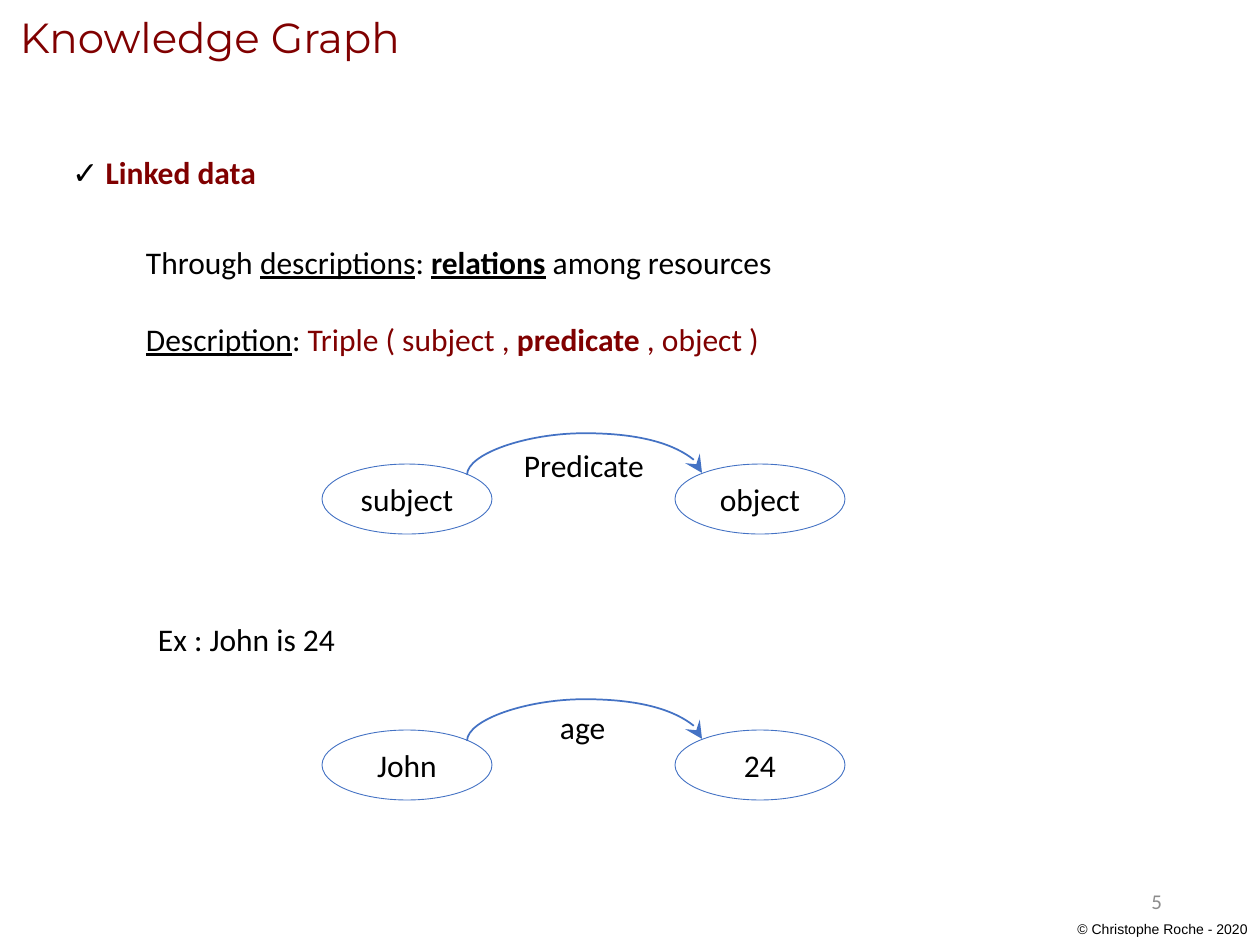
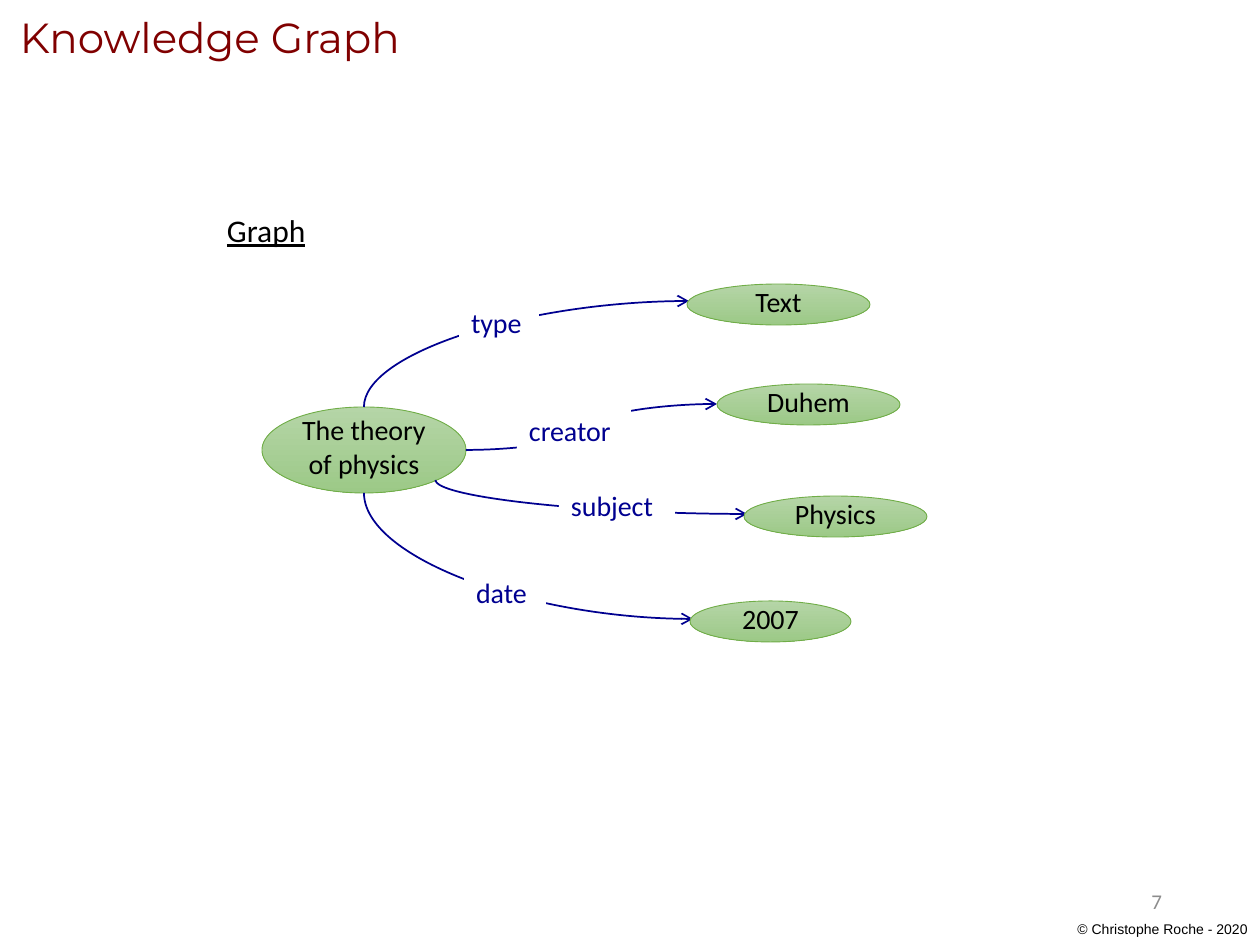
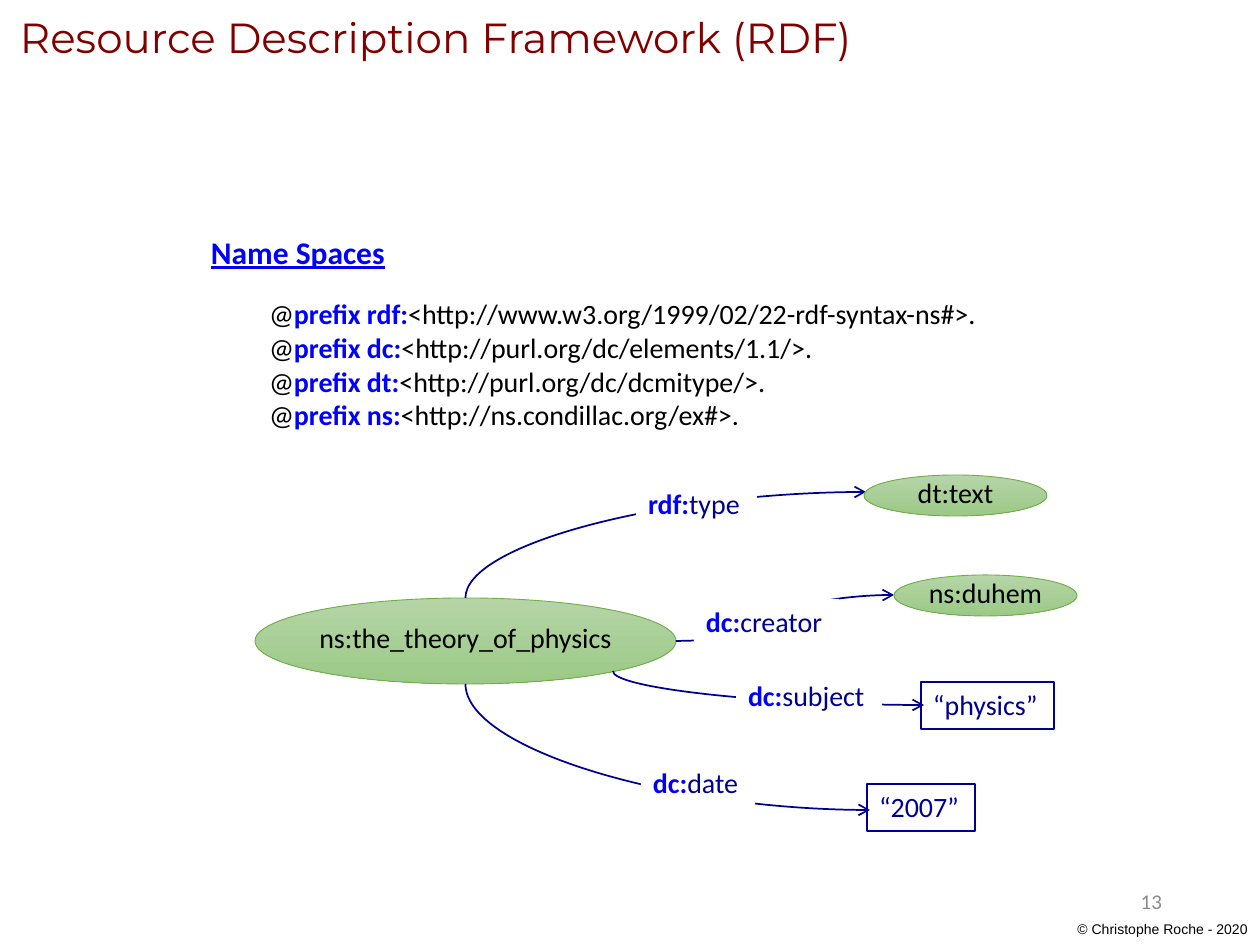
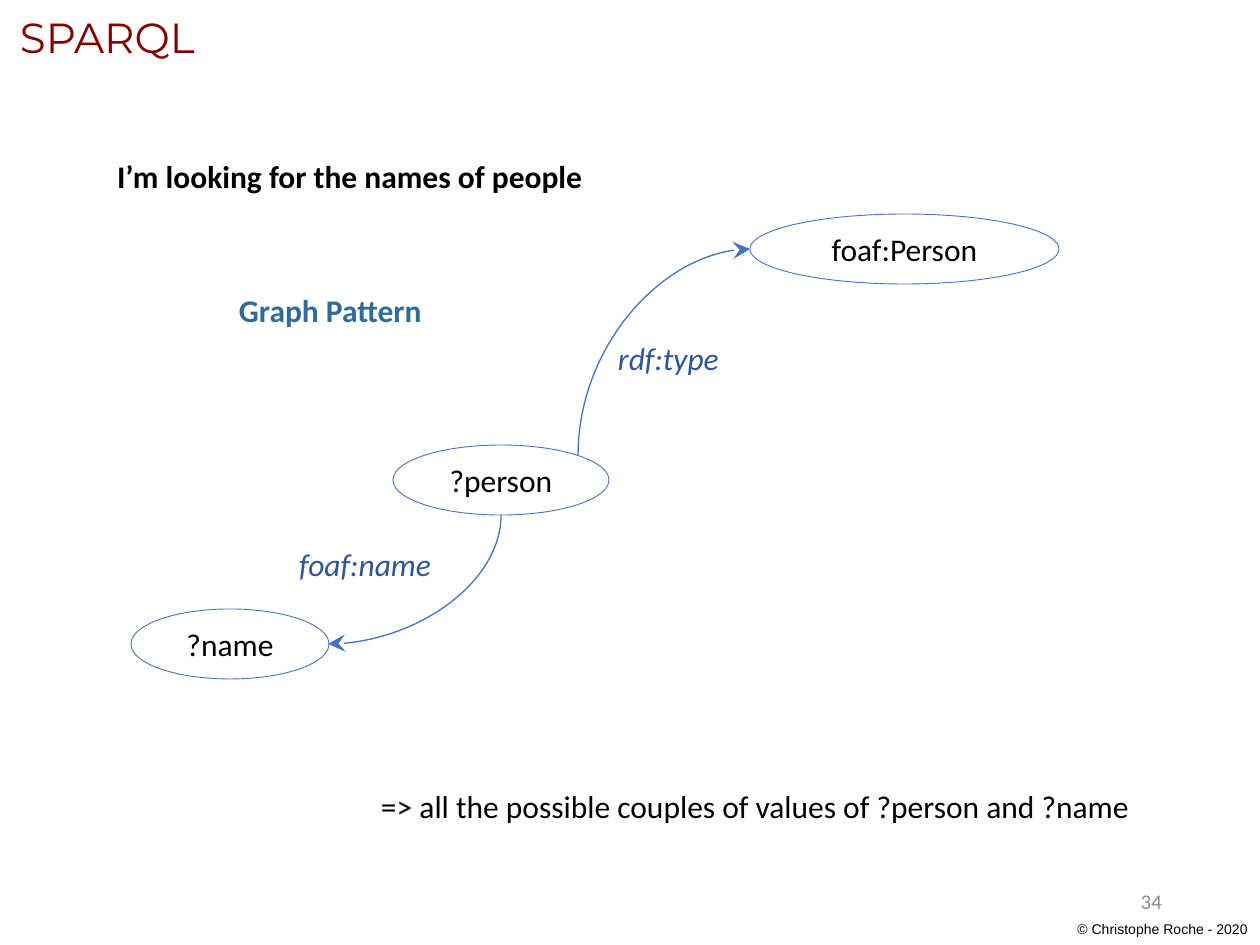
from lxml.etree import SubElement as Sub
from pptx import Presentation
from pptx.dml.color import RGBColor as Rgb
from pptx.enum.shapes import MSO_CONNECTOR as Link, MSO_SHAPE as Kind
from pptx.enum.text import MSO_ANCHOR as Anchor, MSO_AUTO_SIZE as Fit, PP_ALIGN as Align
from pptx.oxml.ns import qn
from pptx.util import Emu, Pt

SCALE = 914400 / 126
HUE = {
    "black": "000000", "white": "FFFFFF", "grey": "8C8C8C", "wine": "800000",
    "line": "4472C4", "navy": "000090", "blue": "0000FF", "steel": "316B97",
    "slate": "2F5597", "edge": "70AD47", "light": "B5D5A7", "deep": "9CC987",
}
BOLD = {"bold": True}
UNDER = {"underline": True}
WINE = {"color": "wine"}
KEY = {"bold": True, "color": "blue"}
# Predicate curves: label left and arrow tip, both from the first node's corner
EDGES = [(-228, (2, 17)), (-170, (30, 120)), (-128, (60, 230)), (-223, (6, 335))]


def px(n):
    return Emu(round(n * SCALE))


def rgb(name):
    return Rgb.from_string(HUE[name])


def write(shape, paras, size=18, font="Calibri", color="black", align=Align.LEFT,
          anchor=Anchor.TOP, wrap=False, grow=True, inset=(12, 6, 12, 6), **look):
    """Fill a shape with text; paras is a string or a list of paragraphs,
    each a list of runs, and a run is a string or a (string, format) pair."""
    frame = shape.text_frame
    frame.word_wrap = wrap
    frame.auto_size = Fit.SHAPE_TO_FIT_TEXT if grow else Fit.NONE
    frame.vertical_anchor = anchor
    (frame.margin_left, frame.margin_top,
     frame.margin_right, frame.margin_bottom) = map(px, inset)
    for i, runs in enumerate([[paras]] if isinstance(paras, str) else paras):
        para = frame.add_paragraph() if i else frame.paragraphs[0]
        para.alignment = align
        for item in runs:
            words, own = (item, {}) if isinstance(item, str) else item
            run = para.add_run()
            run.text = words
            style = {"color": color, **look, **own}
            run.font.size = Pt(size)
            run.font.name = font
            run.font.color.rgb = rgb(style.pop("color"))
            for key, value in style.items():
                setattr(run.font, key, value)


def label(slide, box, paras, fill=None, edge=None, **form):
    shape = slide.shapes.add_textbox(*map(px, box))
    if fill:
        shape.fill.solid()
        shape.fill.fore_color.rgb = rgb(fill)
    if edge:
        shape.line.color.rgb = rgb(edge)
        shape.line.width = Pt(0.75)
    write(shape, paras, **form)
    return shape


def oval(slide, box, words, green=False):
    shape = slide.shapes.add_shape(Kind.OVAL, *map(px, box))
    shape.shadow.inherit = False
    shape.line.width = Pt(0.5)
    shape.line.color.rgb = rgb("edge" if green else "line")
    if green:
        shape.fill.gradient()
        shape.fill.gradient_angle = 270
        for stop, name in zip(shape.fill.gradient_stops, ("light", "deep")):
            stop.color.rgb = rgb(name)
    else:
        shape.fill.background()
    write(shape, words, size=16 if green else 18, align=Align.CENTER,
          anchor=Anchor.MIDDLE, wrap=True, grow=False,
          inset=(0, 6, 0, 13 if green else 6))


def curve(slide, start, end, color="line", width=1, head="stealth", span="lg",
          upright=True, rise=0):
    """Curved arrow; an upright one leaves its start vertically, and one
    with a rise climbs that far before it comes down on its end."""
    (x1, y1), (x2, y2) = start, end
    arrow = slide.shapes.add_connector(Link.CURVE, px(x1), px(y1), px(x2), px(y2))
    props = arrow.element.spPr
    if upright:
        wide, high = abs(y2 - y1), abs(x2 - x1)
        arrow.left, arrow.top = px((x1 + x2 - wide) / 2), px((y1 + y2 - high) / 2)
        arrow.width, arrow.height = px(wide), px(high)
        right, down = x2 > x1, y2 > y1
        arrow.rotation = 270 if right and down else 90
        form = props.find(qn("a:xfrm"))
        form.set("flipH", str(int(right)))
        form.set("flipV", str(int(right and not down)))
        geom = props.find(qn("a:prstGeom"))
        if rise:
            Sub(geom.find(qn("a:avLst")), qn("a:gd"), name="adj1",
                fmla=f"val {round(100000 * rise / wide)}")
        else:
            geom.set("prst", "curvedConnector2")
    arrow.line.color.rgb = rgb(color)
    arrow.line.width = Pt(width)
    Sub(props.find(qn("a:ln")), qn("a:tailEnd"), type=head, w=span, len=span)
    Sub(props, qn("a:effectLst"))


def page(deck, title, wide, number):
    slide = deck.slides.add_slide(deck.slide_layouts[5])
    head = slide.shapes.title
    head.left, head.top, head.width, head.height = map(px, (8, 5, wide, 63))
    write(head, title, size=24, font="Montserrat", color="wine")
    label(slide, (890, 876, 284, 50), str(number), size=12, color="grey",
          align=Align.RIGHT, anchor=Anchor.MIDDLE, wrap=True, grow=False)
    return slide


def footer(deck, slide):
    """Put the copyright line on the layout that all slides share."""
    note = label(slide, (651, 915, 609, 30), "© Christophe Roche - 2020",
                 size=8, font="Arial", align=Align.RIGHT, wrap=True)
    note.element.nvSpPr.cNvPr.set("id", "99")
    deck.slide_layouts[5].shapes.element.append(note.element)


def triple(slide, x, y, names, tag):
    """Two ovals and an arc; tag is the left, top and width of the arc's label."""
    first, link, last = names
    oval(slide, (x, y, 170, 70), first)
    oval(slide, (x + 353, y, 170, 70), last)
    curve(slide, (x + 145, y + 11), (x + 380, y + 9), rise=42)
    left, top, wide = tag
    label(slide, (x + left, y + top, wide, 50), link)


def graph(slide, x, y, hub, wide, far, links):
    """A hub with four labelled curves to nodes that start far to its right.
    Links hold label, its top and width, then node text, box and oval flag."""
    oval(slide, (x, y + 123, wide, 86), hub, green=True)
    mid, half = x + wide / 2, y + 166
    starts = [(mid, y + 123), (x + wide, half),
              (mid + 0.35 * wide, half + 30), (mid, y + 209)]
    base = x + far
    for i, (start, (left, tip), link) in enumerate(zip(starts, EDGES, links)):
        name, top, span, node, (dx, dy, w, h), is_oval = link
        curve(slide, start, (base + tip[0], y + tip[1]), color="navy",
              head="arrow", span="med", upright=i != 1)
        label(slide, (base + left, y + top, span, 47), name,
              fill="white", size=16, color="navy")
        box = (base + dx, y + dy, w, h)
        if is_oval:
            oval(slide, box, node, green=True)
        else:
            label(slide, box, node, edge="navy", size=16, color="navy")


def linked(deck):
    slide = page(deck, "Knowledge Graph", 438, 5)
    footer(deck, slide)
    label(slide, (60, 147, 220, 50), [["✓ ", ("Linked data", BOLD | WINE)]])
    label(slide, (134, 237, 675, 50), [[
        "Through ", ("descriptions", UNDER), ": ",
        ("relations", BOLD | UNDER), " among resources"]])
    label(slide, (134, 314, 662, 50), [[
        ("Description", UNDER), ": ", ("Triple ( subject , ", WINE),
        ("predicate", BOLD | WINE), (" , object )", WINE)]])
    label(slide, (146, 614, 212, 50), "Ex : John is 24")
    triple(slide, 322, 464, ("subject", "Predicate", "object"), (190, -24, 148))
    triple(slide, 322, 730, ("John", "age", "24"), (226, -28, 74))


def theory(deck):
    slide = page(deck, "Knowledge Graph", 438, 7)
    label(slide, (215, 205, 107, 50), "Graph", underline=True)
    graph(slide, 262, 284, "The theory of physics", 204, 425, [
        ("type", 16, 80, "Text", (0, 0, 183, 41), True),
        ("creator", 123, 114, "Duhem", (30, 100, 183, 41), True),
        ("subject", 199, 116, "Physics", (57, 212, 183, 41), True),
        ("date", 286, 82, "2007", (3, 317, 161, 41), True),
    ])


def spaces(deck):
    slide = page(deck, "Resource Description Framework (RDF)", 941, 13)
    label(slide, (199, 227, 204, 50), "Name Spaces", underline=True, **KEY)
    graph(slide, 255, 475, "ns:the_theory_of_physics", 421, 609, [
        ([[("rdf:", KEY), "type"]], 6, 121, "dt:text", (0, 0, 183, 41), True),
        ([[("dc:", KEY), "creator"]], 124, 145, "ns:duhem", (30, 100, 183, 41), True),
        ([[("dc:", KEY), "subject"]], 198, 146, "“physics”", (57, 207, 133, 47), False),
        ([[("dc:", KEY), "date"]], 285, 114, "“2007”", (3, 309, 108, 47), False),
    ])
    names = {
        "rdf": "http://www.w3.org/1999/02/22-rdf-syntax-ns#",
        "dc": "http://purl.org/dc/elements/1.1/",
        "dt": "http://purl.org/dc/dcmitype/",
        "ns": "http://ns.condillac.org/ex#",
    }
    label(slide, (257, 291, 774, 149), [
        ["@", (f"prefix {key}:", KEY), f"<{site}>."] for key, site in names.items()
    ], size=16)


def query(deck):
    slide = page(deck, "SPARQL", 212, 34)
    label(slide, (105, 151, 498, 50), "I’m looking for the names of people", bold=True)
    label(slide, (227, 285, 213, 50), "Graph Pattern", bold=True, color="steel")
    oval(slide, (131, 609, 198, 70), "?name")
    oval(slide, (393, 445, 216, 70), "?person")
    oval(slide, (750, 214, 309, 70), "foaf:Person")
    curve(slide, (501, 515), (328, 644), width=0.75)
    curve(slide, (578, 455), (750, 249), width=0.75)
    label(slide, (287, 539, 169, 50), "foaf:name", italic=True, color="slate")
    label(slide, (606, 333, 135, 50), "rdf:type", italic=True, color="slate")
    label(slide, (369, 781, 793, 50),
          "=> all the possible couples of values of ?person and ?name")


def main():
    deck = Presentation()
    deck.slide_width, deck.slide_height = px(1260), px(945)
    for build in (linked, theory, spaces, query):
        build(deck)
    deck.save("out.pptx")


if __name__ == "__main__":
    main()
